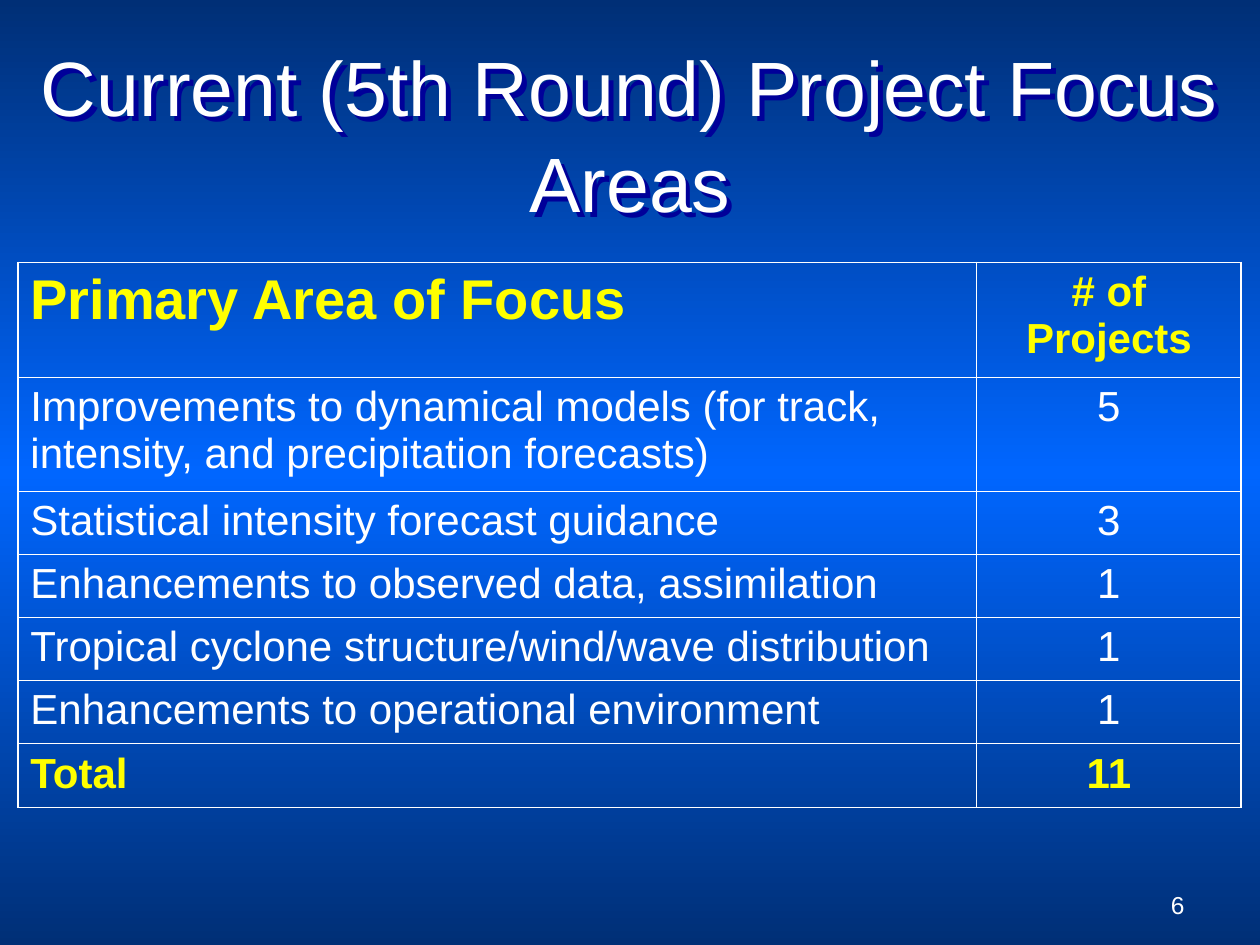
from lxml import etree
from pptx import Presentation
from pptx.dml.color import RGBColor
from pptx.enum.text import MSO_ANCHOR, PP_ALIGN
from pptx.oxml import parse_xml
from pptx.oxml.ns import nsdecls, qn
from pptx.util import Cm, Pt

LEFT, CENTER, RIGHT = PP_ALIGN.LEFT, PP_ALIGN.CENTER, PP_ALIGN.RIGHT
MIDDLE, BOTTOM = MSO_ANCHOR.MIDDLE, MSO_ANCHOR.BOTTOM
COLORS = {"edge": "002F76", "glow": "0066FF", "text": "FFFFFF",
          "accent": "FFFF00", "shadow": "000099"}
FONT = "Arial"
ROWS = [
    ("Primary Area of Focus", "# of Projects"),
    ("Improvements to dynamical models (for track, intensity, "
     "and precipitation forecasts)", "5"),
    ("Statistical intensity forecast guidance", "3"),
    ("Enhancements to observed data, assimilation", "1"),
    ("Tropical cyclone structure/wind/wave distribution", "1"),
    ("Enhancements to operational environment", "1"),
    ("Total", "11"),
]
COLUMN_WIDTHS = (19.33, 5.33)
ROW_HEIGHTS = (2.32, 2.3, 1.26, 1.26, 1.26, 1.26, 1.29)


def style(para, size, color="text", align=LEFT, bold=False):
    para.alignment = align
    para.font.name = FONT
    para.font.size = Pt(size)
    para.font.bold = bold
    para.font.color.rgb = RGBColor.from_string(COLORS[color])


def add_background(page):
    fill = page.background.fill
    fill.gradient()
    fill.gradient_angle = 270  # top to bottom
    stops = page.background._cSld.find(".//" + qn("a:gsLst"))
    for stop in list(stops):
        stops.remove(stop)
    for position, name in ((0, "edge"), (50, "glow"), (100, "edge")):
        stop = etree.SubElement(stops, qn("a:gs"), pos=str(position * 1000))
        etree.SubElement(stop, qn("a:srgbClr"), val=COLORS[name])


def add_text(page, box, text, size, align, anchor):
    shape = page.shapes.add_textbox(*map(Cm, box))
    frame = shape.text_frame
    frame.word_wrap = True
    frame.vertical_anchor = anchor
    para = frame.paragraphs[0]
    para.text = text
    style(para, size, align=align)
    return shape


def add_title(page, box):
    title = add_text(page, box, "Current (5th Round) Project Focus Areas",
                     44, CENTER, MIDDLE)
    title.text_frame.margin_bottom = Cm(1.1)
    title.text_frame.paragraphs[0].line_spacing = 1.04
    # With no fill, the shadow is cast by the letters
    title._element.spPr.append(parse_xml(
        f'<a:effectLst {nsdecls("a")}>'
        '<a:outerShdw dist="50800" dir="2700000" algn="ctr" rotWithShape="0">'
        f'<a:srgbClr val="{COLORS["shadow"]}"/></a:outerShdw></a:effectLst>'))


def add_borders(cell):
    properties = cell._tc.get_or_add_tcPr()
    for index, side in enumerate(("lnL", "lnR", "lnT", "lnB")):
        properties.insert(index, parse_xml(
            f'<a:{side} {nsdecls("a")} w="{Pt(1)}"><a:solidFill>'
            f'<a:srgbClr val="{COLORS["text"]}"/></a:solidFill></a:{side}>'))


def add_focus_table(page, left, top):
    table = page.shapes.add_table(
        len(ROWS), len(COLUMN_WIDTHS), Cm(left), Cm(top),
        Cm(sum(COLUMN_WIDTHS)), Cm(sum(ROW_HEIGHTS))).table
    table.horz_banding = False
    for column, width in zip(table.columns, COLUMN_WIDTHS):
        column.width = Cm(width)
    for row, height in zip(table.rows, ROW_HEIGHTS):
        row.height = Cm(height)
    for r, texts in enumerate(ROWS):
        strong = r in (0, len(ROWS) - 1)
        for c, text in enumerate(texts):
            cell = table.cell(r, c)
            cell.fill.background()
            add_borders(cell)
            para = cell.text_frame.paragraphs[0]
            para.text = text
            style(para, 32 if r == c == 0 else 24,
                  "accent" if strong else "text",
                  CENTER if c else LEFT, strong)


def main():
    deck = Presentation()
    deck.slide_width, deck.slide_height = Cm(25.4), Cm(19.05)
    page = deck.slides.add_slide(deck.slide_layouts[6])
    add_background(page)
    # Page number
    add_text(page, (18.2, 17.35, 5.93, 1.32), "6", 14, RIGHT, BOTTOM)
    add_focus_table(page, 0.36, 5.29)
    add_title(page, (0, 0.97, 25.4, 4.34))
    deck.save("out.pptx")


if __name__ == "__main__":
    main()
